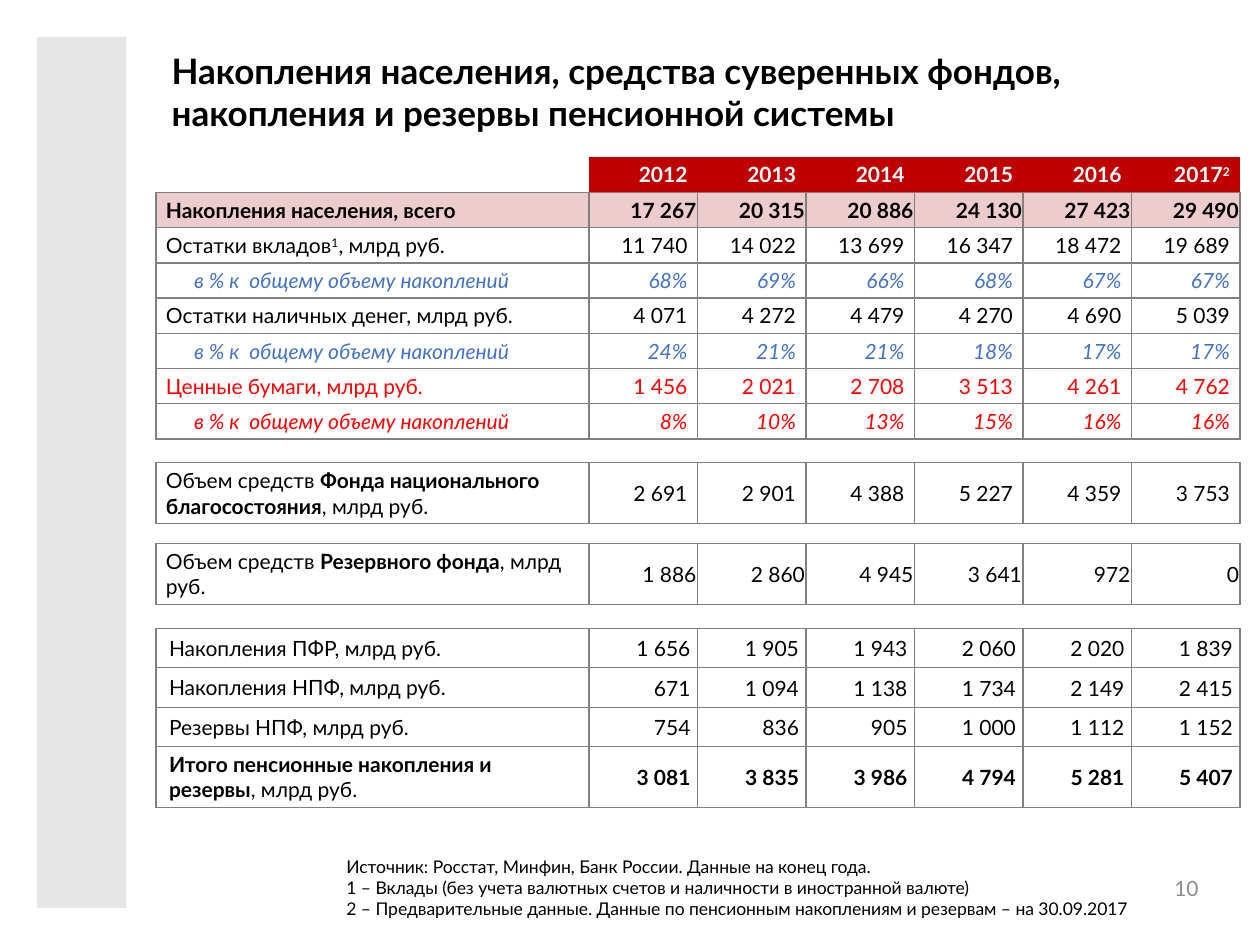
from lxml.etree import SubElement
from pptx import Presentation
from pptx.dml.color import RGBColor
from pptx.enum.shapes import MSO_SHAPE as Shape
from pptx.enum.text import MSO_ANCHOR as Anchor, PP_ALIGN as Align
from pptx.oxml.ns import qn
from pptx.util import Emu, Pt

COLORS = {
    "black": "000000", "white": "FFFFFF", "band": "E6E6E6", "number": "8C8C8C",
    "header": "C00000", "total": "ECCCCC", "line": "808080",
    "share": "4472C4", "accent": "FF0000",
}
PX_PER_INCH = 126


def px(length):
    return Emu(round(length * 914400 / PX_PER_INCH))


def rgb(name):
    return RGBColor.from_string(COLORS[name])


class SlideBuilder:
    """Holds the text style and the current slide."""

    def __init__(self, page, font="Lato"):
        self.page = page
        self.font = font

    def add_spans(self, para, spans, size, color="black", bold=False, italic=False):
        """Add runs; a span is a text or a (text, mark) pair: 'b' bold, 'sup' raised."""
        for span in spans:
            text, mark = (span, "") if isinstance(span, str) else span
            run = para.add_run()
            run.text = text
            run.font.name = self.font
            run.font.size = Pt(size)
            run.font.bold = bold or mark == "b"
            run.font.italic = italic
            run.font.color.rgb = rgb(color)
            if mark == "sup":
                run.font._element.set("baseline", "30000")

    def band(self, left, top, width, height, color):
        shape = self.page.shapes.add_shape(
            Shape.RECTANGLE, px(left), px(top), px(width), px(height))
        shape.shadow.inherit = False
        shape.fill.solid()
        shape.fill.fore_color.rgb = rgb(color)
        shape.line.fill.background()

    def title(self, left, top, width, height, text, size):
        box = self.page.shapes.title
        box.left, box.top, box.width, box.height = map(px, (left, top, width, height))
        box.text_frame.vertical_anchor = Anchor.MIDDLE
        para = box.text_frame.paragraphs[0]
        para.alignment = Align.LEFT
        self.add_spans(para, [text], size, bold=True)

    def text(self, left, top, width, height, lines, size, color="black",
             align=Align.LEFT, anchor=Anchor.TOP):
        box = self.page.shapes.add_textbox(px(left), px(top), px(width), px(height))
        frame = box.text_frame
        frame.word_wrap = True
        frame.vertical_anchor = anchor
        for index, line in enumerate(lines):
            para = frame.add_paragraph() if index else frame.paragraphs[0]
            para.alignment = align
            self.add_spans(para, [line], size, color)

    def table(self, left, top, widths, heights):
        frame = self.page.shapes.add_table(
            len(heights), len(widths), px(left), px(top), px(sum(widths)), px(sum(heights)))
        grid = frame.table
        grid.first_row = grid.horz_banding = False
        for column, width in zip(grid.columns, widths):
            column.width = px(width)
        for row, height in zip(grid.rows, heights):
            row.height = px(height)
        return grid

    def cell(self, cell, spans, margins, sides, fill=None, align=Align.LEFT,
             size=12, **style):
        cell.margin_left, cell.margin_top, cell.margin_right, cell.margin_bottom = map(px, margins)
        cell.vertical_anchor = Anchor.MIDDLE
        para = cell.text_frame.paragraphs[0]
        para.alignment = align
        self.add_spans(para, spans, size, **style)
        if not spans:  # the end mark keeps an empty row low
            SubElement(para._p, qn("a:endParaRPr"), sz=str(size * 100))
        # Borders come before the fill in the cell properties
        properties = cell._tc.get_or_add_tcPr()
        for side in "LRTB":
            line = SubElement(properties, qn("a:ln" + side), w=str(Pt(1)))
            if side in sides:
                solid = SubElement(line, qn("a:solidFill"))
                SubElement(solid, qn("a:srgbClr"), val=COLORS["line"])
            else:
                SubElement(line, qn("a:noFill"))
        if fill:
            cell.fill.solid()
            cell.fill.fore_color.rgb = rgb(fill)
        else:
            cell.fill.background()


# Cell margins: left, top, right, bottom
PLAIN, INDENT, PENSION = (10, 5, 10, 5), (38, 5, 10, 5), (13, 5, 10, 5)
TIGHT, PADDED, NONE = (1, 1, 1, 0), (1, 1, 7, 0), (0, 0, 0, 0)

YEARS = [["2012"], ["2013"], ["2014"], ["2015"], ["2016"], ["2017", ("2", "sup")]]
SHARE = ["в % к  общему объему накоплений"]
BLUE = {"color": "share", "italic": True}
RED = {"color": "accent"}
RED_SHARE = {"color": "accent", "italic": True}
TOTAL = {"bold": True, "fill": "total"}
UNIT = ", млрд руб."


def row(height, label, values, label_margins=PLAIN, value_margins=PLAIN,
        style=None, value_style=None):
    style = style or {}
    return (height, label, values.split("|"), label_margins, value_margins,
            style, value_style or style)


def gap(height):
    return (height, [], [], NONE, NONE, {"size": 6}, {"size": 6})


ROWS = [
    row(35, ["Накопления населения, всего"], "17 267|20 315|20 886|24 130|27 423|29 490",
        PLAIN, TIGHT, TOTAL),
    row(35, ["Остатки вкладов", ("1", "sup"), UNIT], "11 740|14 022|13 699|16 347|18 472|19 689"),
    row(35, SHARE, "68%|69%|66%|68%|67%|67%", INDENT, style=BLUE),
    row(35, ["Остатки наличных денег" + UNIT], "4 071|4 272|4 479|4 270|4 690|5 039"),
    row(35, SHARE, "24%|21%|21%|18%|17%|17%", INDENT, style=BLUE),
    row(35, ["Ценные бумаги" + UNIT], "1 456|2 021|2 708|3 513|4 261|4 762", style=RED),
    row(35, SHARE, "8%|10%|13%|15%|16%|16%", INDENT, style=RED_SHARE),
    gap(24),
    row(61, ["Объем средств ", ("Фонда национального благосостояния", "b"), UNIT],
        "2 691|2 901|4 388|5 227|4 359|3 753"),
    gap(20),
    row(61, ["Объем средств ", ("Резервного фонда", "b"), UNIT],
        "1 886|2 860|4 945|3 641|972|0", PLAIN, TIGHT),
    gap(24),
    row(39, ["Накопления ПФР" + UNIT], "1 656|1 905|1 943|2 060|2 020|1 839", PENSION, PADDED),
    row(40, ["Накопления НПФ" + UNIT], "671|1 094|1 138|1 734|2 149|2 415", PENSION, PADDED),
    row(39, ["Резервы НПФ" + UNIT], "754|836|905|1 000|1 112|1 152", PENSION, PADDED),
    row(61, [("Итого пенсионные накопления и резервы", "b"), UNIT],
        "3 081|3 835|3 986|4 794|5 281|5 407", PENSION, PADDED, value_style={"bold": True}),
]


def main():
    deck = Presentation()
    deck.slide_width, deck.slide_height = px(1260), px(945)
    slide = SlideBuilder(deck.slides.add_slide(deck.slide_layouts[5]))

    # Side band and title
    slide.band(37, 37, 89, 871, "band")
    slide.title(159, 39, 1081, 105, "Накопления населения, средства суверенных фондов, "
                "накопления и резервы пенсионной системы", 20)

    # Table header
    grid = slide.table(156, 157, [433] + [108.5] * len(YEARS),
                       [35] + [entry[0] for entry in ROWS])
    slide.cell(grid.cell(0, 0), [], PLAIN, "B")
    for column, year in enumerate(YEARS, 1):
        slide.cell(grid.cell(0, column), year, PLAIN, "B", "header", Align.RIGHT,
                   color="white", bold=True)

    # Table body
    for index, entry in enumerate(ROWS, 1):
        _, label, values, label_margins, value_margins, style, value_style = entry
        sides = "LRTB" if label else "TB"
        slide.cell(grid.cell(index, 0), label, label_margins, sides, **style)
        for column in range(1, len(YEARS) + 1):
            slide.cell(grid.cell(index, column), values[column - 1:column], value_margins,
                       sides, align=Align.RIGHT, **value_style)

    # Source notes and page number
    slide.text(334, 850, 878, 77, [
        "Источник: Росстат, Минфин, Банк России. Данные на конец года.",
        "1 – Вклады (без учета валютных счетов и наличности в иностранной валюте)",
        "2 – Предварительные данные. Данные по пенсионным накоплениям и резервам – на 30.09.2017",
    ], 10)
    slide.text(917, 863, 294, 50, ["10"], 12, "number", Align.RIGHT, Anchor.MIDDLE)

    deck.save("out.pptx")


if __name__ == "__main__":
    main()
